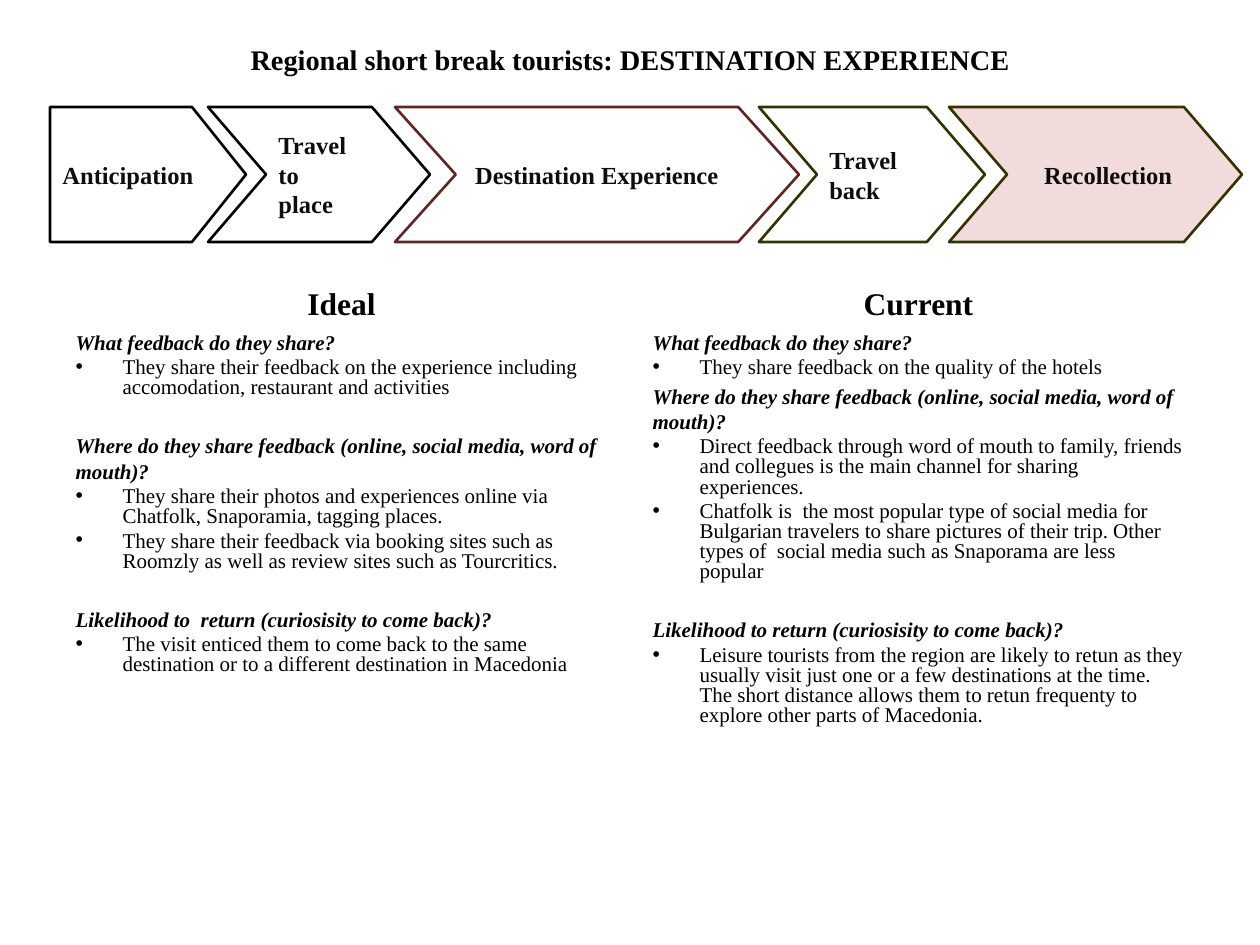
from dataclasses import dataclass

from lxml.etree import SubElement
from pptx import Presentation
from pptx.dml.color import RGBColor
from pptx.enum.shapes import MSO_SHAPE as Shape
from pptx.enum.text import MSO_ANCHOR as Anchor, MSO_AUTO_SIZE as AutoSize, PP_ALIGN as Align
from pptx.oxml.ns import qn
from pptx.util import Pt

PX = 914400 / 126


@dataclass(frozen=True)
class Theme:
    font: str = "Times New Roman"
    text: str = "000000"
    step_text: str = "0D0D0D"
    black: str = "000000"
    maroon: str = "632523"
    olive: str = "333300"
    blush: str = "F2DCDB"
    title_size: float = 16.2
    heading_size: float = 18
    step_size: float = 14
    body_size: float = 12
    line_width: float = 1.5
    tight_gap: float = 2.4
    wide_gap: float = 19.4


THEME = Theme()
BULLET_INDENT = 47

# Journey steps: label, shape, left, width, point, line, fill, alignment, extra indent
STEPS = [
    ("Anticipation", Shape.PENTAGON, 50, 196, 0.4, THEME.black, None, Align.LEFT, 0),
    ("Travel to place", Shape.CHEVRON, 208, 222, 0.43, THEME.black, None, Align.LEFT, 0),
    ("Destination Experience", Shape.CHEVRON, 395, 404, 0.45, THEME.maroon, None, Align.CENTER, 0),
    ("Travel back", Shape.CHEVRON, 759, 226, 0.43, THEME.olive, None, Align.LEFT, 0),
    ("Recollection", Shape.CHEVRON, 949, 293, 0.43, THEME.olive, THEME.blush, Align.LEFT, 24),
]

# Columns: heading, then (question, space before it, answers)
WHAT = "What feedback do they share?"
WHERE = "Where do they share feedback (online, social media, word of mouth)?"
COLUMNS = [
    ("Ideal", [
        (WHAT, THEME.tight_gap, [
            "They share their feedback on the experience including accomodation, "
            "restaurant and activities"]),
        (WHERE, THEME.wide_gap, [
            "They share their photos and experiences online via Chatfolk, Snaporamia, "
            "tagging places.",
            "They share their feedback via booking sites such as Roomzly as well as "
            "review sites such as Tourcritics."]),
        ("Likelihood to  return (curiosisity to come back)?", THEME.wide_gap, [
            "The visit enticed them to come back to the same destination or to a "
            "different destination in Macedonia"]),
    ]),
    ("Current", [
        (WHAT, THEME.tight_gap, ["They share feedback on the quality of the hotels"]),
        (WHERE, THEME.tight_gap, [
            "Direct feedback through word of mouth to family, friends and collegues is "
            "the main channel for sharing experiences.",
            "Chatfolk is  the most popular type of social media for Bulgarian travelers "
            "to share pictures of their trip. Other types of  social media such as "
            "Snaporama are less popular"]),
        ("Likelihood to return (curiosisity to come back)?", THEME.wide_gap, [
            "Leisure tourists from the region are likely to retun as they usually visit "
            "just one or a few destinations at the time. The short distance allows them "
            "to retun frequenty to explore other parts of Macedonia."]),
    ]),
]


def px(length):
    return round(length * PX)


def place(box, left, top, width, height):
    box.left, box.top, box.width, box.height = map(px, (left, top, width, height))


def style(para, size, color=THEME.text, bold=False, italic=False):
    for span in para.runs:
        font = span.font
        font.name, font.size = THEME.font, Pt(size)
        font.bold, font.italic = bold, italic
        font.color.rgb = RGBColor.from_string(color)


def set_bullet(para, char=None):
    props = para._p.get_or_add_pPr()
    indent = px(BULLET_INDENT) if char else 0
    props.set("marL", str(indent))
    props.set("indent", str(-indent))
    if char:
        SubElement(props, qn("a:buChar")).set("char", char)
    else:
        SubElement(props, qn("a:buNone"))


def fill_heading(box, text, size, anchor):
    frame = box.text_frame
    frame.text = text
    frame.auto_size = AutoSize.NONE
    frame.vertical_anchor = anchor
    para = frame.paragraphs[0]
    para.alignment = Align.CENTER
    style(para, size, bold=True)


def fill_answers(box, sections):
    frame = box.text_frame
    lines = []
    for question, gap, answers in sections:
        lines.append((question, gap, True))
        lines += [(answer, THEME.tight_gap, False) for answer in answers]
    frame.text = "\n".join(text for text, _, _ in lines)
    frame.auto_size = AutoSize.NONE
    frame.vertical_anchor = Anchor.TOP
    for para, (_, gap, is_question) in zip(frame.paragraphs, lines):
        para.space_before = Pt(gap)
        para.line_spacing = 1.0 if is_question else 0.8
        set_bullet(para, None if is_question else "•")
        style(para, THEME.body_size, bold=is_question, italic=is_question)


def add_step(page, label, kind, left, width, point, line, fill, align, indent):
    box = page.shapes.add_shape(kind, px(left), px(107), px(width), px(135))
    box.adjustments[0] = point
    box.shadow.inherit = False
    box.line.color.rgb = RGBColor.from_string(line)
    box.line.width = Pt(THEME.line_width)
    if fill:
        box.fill.solid()
        box.fill.fore_color.rgb = RGBColor.from_string(fill)
    else:
        box.fill.background()
    frame = box.text_frame
    frame.text = label
    frame.word_wrap = True
    frame.vertical_anchor = Anchor.MIDDLE
    if indent:
        frame.margin_left, frame.margin_right = px(13 + indent), 0
    para = frame.paragraphs[0]
    para.alignment = align
    style(para, THEME.step_size, THEME.step_text, bold=True)


def main():
    deck = Presentation()
    deck.slide_width, deck.slide_height = px(1260), px(945)
    page = deck.slides.add_slide(deck.slide_layouts.get_by_name("Comparison"))

    # Title
    title, *bodies = page.placeholders
    place(title, 63, 38, 1134, 42)
    fill_heading(title, "Regional short break tourists: DESTINATION EXPERIENCE",
                 THEME.title_size, Anchor.MIDDLE)

    # Ideal and current columns
    for i, (heading, sections) in enumerate(COLUMNS):
        left = 63 + i * 577
        heading_box, answer_box = bodies[2 * i:2 * i + 2]
        place(heading_box, left, 265, 557, 63)
        fill_heading(heading_box, heading, THEME.heading_size, Anchor.BOTTOM)
        place(answer_box, left, 323, 557, 600)
        fill_answers(answer_box, sections)

    # Journey steps
    for step in STEPS:
        add_step(page, *step)

    deck.save("out.pptx")


if __name__ == "__main__":
    main()
